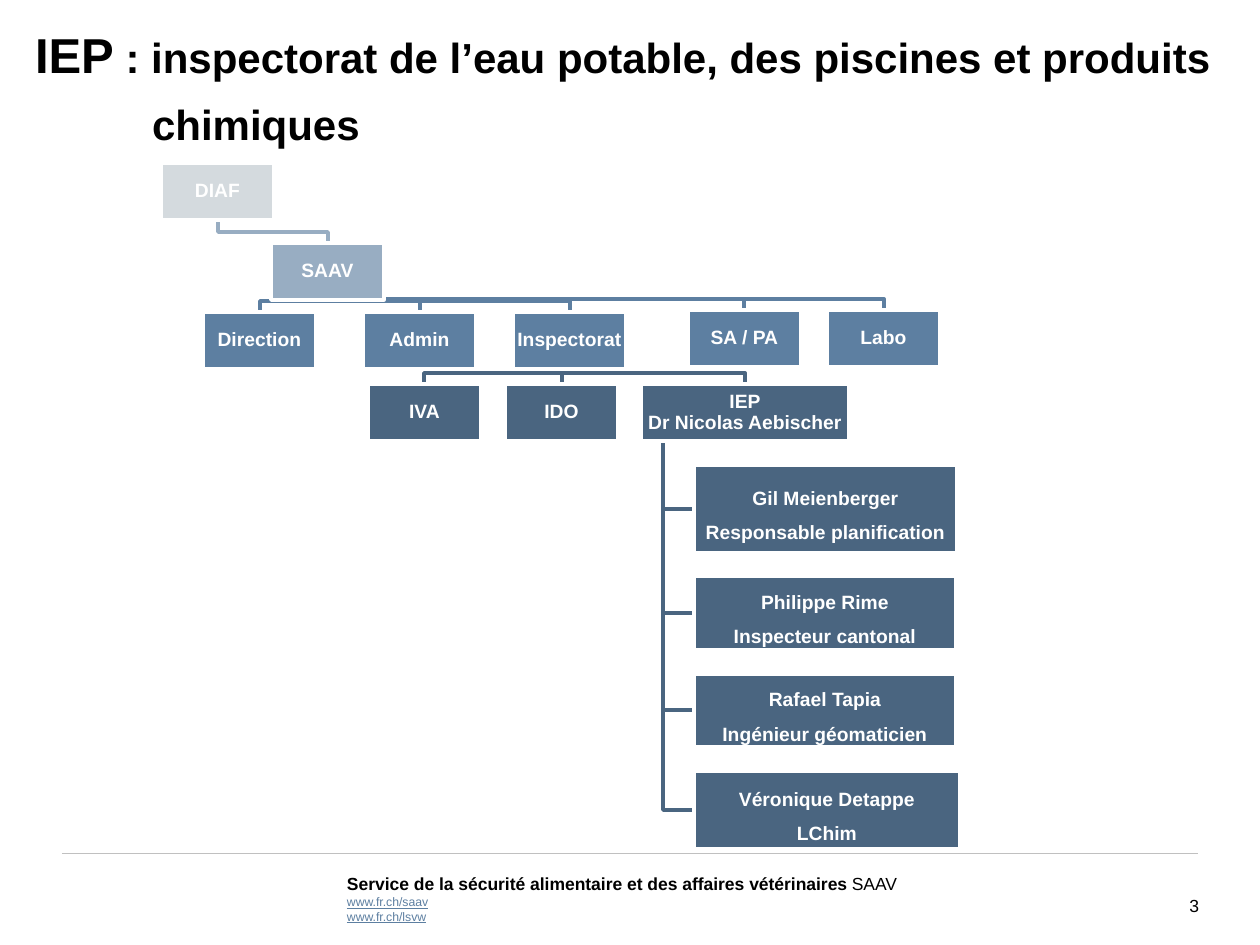
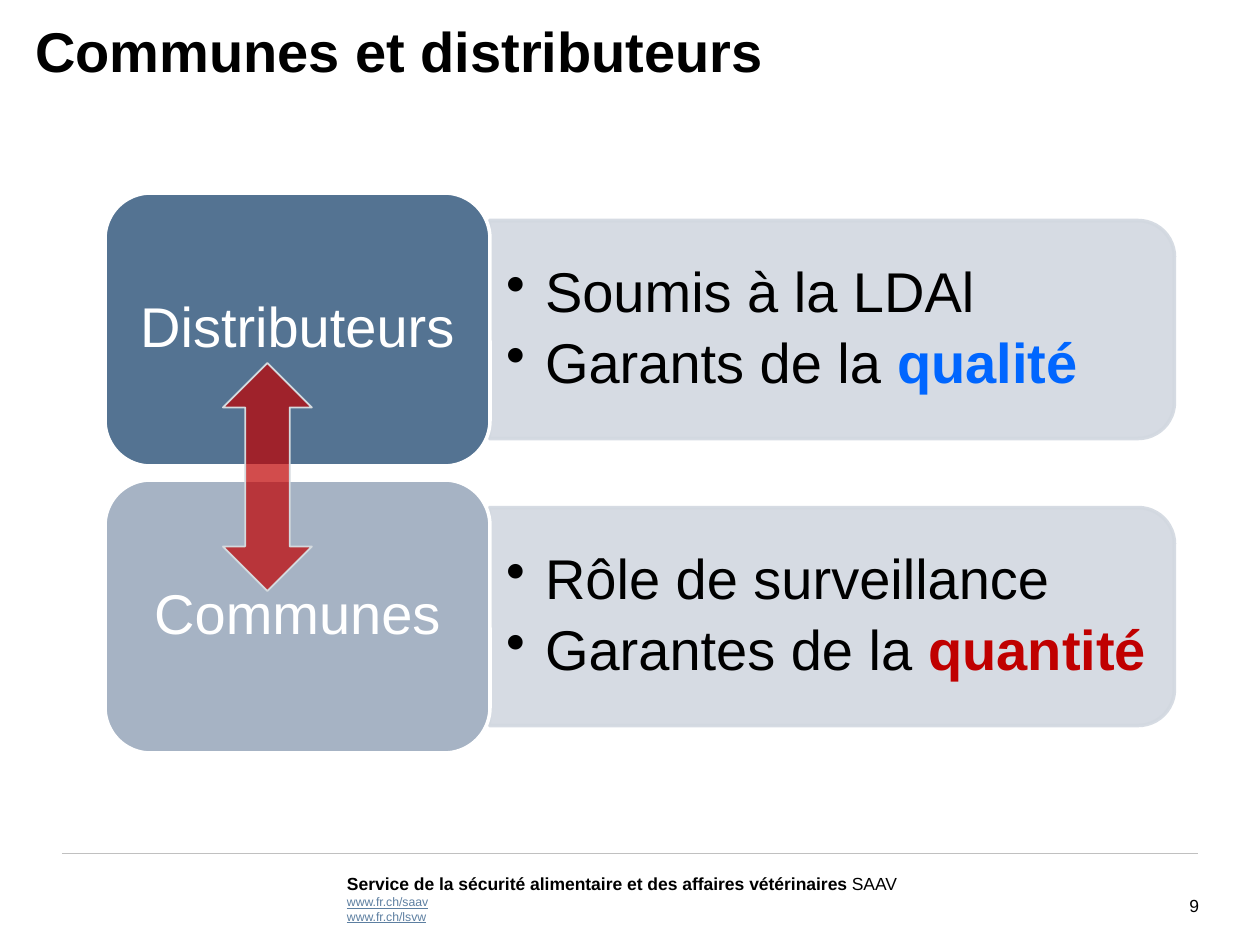
from dataclasses import dataclass

from lxml import etree
from pptx import Presentation
from pptx.dml.color import RGBColor
from pptx.enum.shapes import MSO_CONNECTOR, MSO_SHAPE
from pptx.enum.text import MSO_ANCHOR, PP_ALIGN
from pptx.oxml.ns import qn
from pptx.util import Pt

PX = 914400 / 126  # EMU per px

RECTANGLE = MSO_SHAPE.RECTANGLE
ROUNDED = MSO_SHAPE.ROUNDED_RECTANGLE
ROUNDED_TOP = MSO_SHAPE.ROUND_2_SAME_RECTANGLE
UP_DOWN_ARROW = MSO_SHAPE.UP_DOWN_ARROW
STRAIGHT = MSO_CONNECTOR.STRAIGHT
TOP, MIDDLE = MSO_ANCHOR.TOP, MSO_ANCHOR.MIDDLE
LEFT, CENTER, RIGHT = PP_ALIGN.LEFT, PP_ALIGN.CENTER, PP_ALIGN.RIGHT


@dataclass(frozen=True)
class Theme:
    font: str = "Arial"
    black: str = "000000"
    white: str = "FFFFFF"
    rule: str = "C0C0C0"
    pale: str = "D4DADE"
    light: str = "98ADC2"
    medium: str = "5D7FA1"
    dark: str = "4A6580"
    distributors: str = "547392"
    communes: str = "A6B3C4"
    panel: str = "D2D8E0"
    red: str = "C00000"
    blue: str = "0066FF"
    large: int = 32
    title_lead: int = 28
    title_long: int = 24
    node: int = 11
    footer: int = 10
    link: int = 7
    title_leading: int = 37


THEME = Theme()


@dataclass(frozen=True)
class Node:
    """One box of the organisation chart, measured in px."""
    text: str
    left: int
    top: int
    color: str
    parent: str = ""
    width: int = 113
    height: int = 57
    spacing: float = 0.9

    @property
    def center(self):
        return self.left + self.width / 2

    @property
    def middle(self):
        return self.top + self.height / 2

    @property
    def bottom(self):
        return self.top + self.height


BUS_GAP = 11      # from the horizontal line down to the boxes below it
STAFF_INDENT = 22  # from the left of the parent box to the staff line
STAFF_LEFT = 694
STAFF = [
    ("Gil Meienberger\nResponsable planification", 465, 263, 88),
    ("Philippe Rime\nInspecteur cantonal", 576, 262, 74),
    ("Rafael Tapia\nIngénieur géomaticien", 674, 262, 73),
    ("Véronique Detappe\nLChim", 771, 266, 78),
]
UNITS = {
    "diaf": Node("DIAF", 161, 163, THEME.pale),
    "saav": Node("SAAV", 271, 243, THEME.light, "diaf"),
    "direction": Node("Direction", 203, 312, THEME.medium, "saav"),
    "admin": Node("Admin", 363, 312, THEME.medium, "saav"),
    "inspectorat": Node("Inspectorat", 513, 312, THEME.medium, "saav"),
    "sa_pa": Node("SA / PA", 688, 310, THEME.medium, "saav"),
    "labo": Node("Labo", 827, 310, THEME.medium, "saav"),
    "iva": Node("IVA", 368, 384, THEME.dark, "inspectorat"),
    "ido": Node("IDO", 505, 384, THEME.dark, "inspectorat"),
    "iep": Node("IEP\nDr Nicolas Aebischer", 641, 384, THEME.dark,
                "inspectorat", width=208),
}


def px(*values):
    lengths = [round(value * PX) for value in values]
    return lengths if len(lengths) > 1 else lengths[0]


def rgb(color):
    return RGBColor.from_string(color)


def add_span(para, text, size, color, bold=False, underline=False):
    for index, line in enumerate(text.split("\n")):
        if index:
            para.add_line_break()
        span = para.add_run()
        span.text = line
        span.font.name = THEME.font
        span.font.size = Pt(size)
        span.font.bold = bold
        span.font.underline = underline
        span.font.color.rgb = rgb(color)


def write_text(shape, paragraphs, size, color=THEME.black, bold=False,
               align=LEFT, anchor=TOP, insets=(0, 0), spacing=None,
               after=0, hang=0, bullet=None):
    """Each paragraph is a list of (text, format changes) spans."""
    frame = shape.text_frame
    frame.word_wrap = True
    frame.vertical_anchor = anchor
    frame.margin_left = frame.margin_right = px(insets[0])
    frame.margin_top = frame.margin_bottom = px(insets[1])
    for index, spans in enumerate(paragraphs):
        para = frame.add_paragraph() if index else frame.paragraphs[0]
        para.alignment = align
        if spacing:
            para.line_spacing = spacing
        para.space_after = Pt(after)
        properties = para._p.get_or_add_pPr()
        if hang:
            properties.set("marL", str(px(hang)))
            properties.set("indent", str(-px(hang)))
        if bullet:
            etree.SubElement(properties, qn("a:buChar")).set("char", bullet)
        for text, changes in spans:
            add_span(para, text, **{"size": size, "color": color,
                                    "bold": bold, **changes})
    return frame


def add_text(page, area, paragraphs, **text_format):
    box = page.shapes.add_textbox(*px(*area))
    return write_text(box, paragraphs, **text_format)


def add_block(page, kind, area, fill, line, line_width=2, opacity=100):
    block = page.shapes.add_shape(kind, *px(*area))
    block.shadow.inherit = False
    block.fill.solid()
    block.fill.fore_color.rgb = rgb(fill)
    block.line.color.rgb = rgb(line)
    block.line.width = Pt(line_width)
    if opacity < 100:
        for color in block._element.spPr.iter(qn("a:srgbClr")):
            if color.get("val") == fill:
                alpha = etree.SubElement(color, qn("a:alpha"))
                alpha.set("val", str(opacity * 1000))
    return block


def add_branch(page, points, color):
    builder = page.shapes.build_freeform(*points[0], scale=PX)
    builder.add_line_segments(points[1:], close=False)
    branch = builder.convert_to_shape()
    branch.shadow.inherit = False
    branch.fill.background()
    branch.line.color.rgb = rgb(color)
    branch.line.width = Pt(2)


def add_rule(page, left, right, y):
    rule = page.shapes.add_connector(STRAIGHT, *px(left, y, right, y))
    rule.line.color.rgb = rgb(THEME.rule)
    rule.line.width = Pt(0.25)
    etree.SubElement(rule._element.spPr, qn("a:effectLst"))


def add_page(deck, number, title, title_size, hang=0):
    """Blank page with the shared title style and footer."""
    page = deck.slides.add_slide(deck.slide_layouts[6])
    add_text(page, (1144, 895, 55, 21), [[(str(number), {})]],
             size=THEME.footer, align=RIGHT)
    link = {"size": THEME.link, "color": THEME.medium, "underline": True}
    service = "Service de la sécurité alimentaire et des affaires vétérinaires "
    footer = add_text(page, (347, 871, 661, 98), [
        [(service, {"bold": True}), ("SAAV", {})],
        [("www.fr.ch/saav", link)],
        [("www.fr.ch/lsvw", link)],
    ], size=THEME.footer)
    footer.paragraphs[0].line_spacing = Pt(13.4)
    add_rule(page, 62, 1198, 853)
    add_text(page, (35, 19, 1201, 123), [title], size=title_size, bold=True,
             spacing=Pt(THEME.title_leading), hang=hang)
    return page


def add_node(page, node):
    block = add_block(page, RECTANGLE,
                      (node.left, node.top, node.width, node.height),
                      node.color, THEME.white)
    write_text(block, [[(node.text, {})]], size=THEME.node, color=THEME.white,
               bold=True, align=CENTER, anchor=MIDDLE, insets=(1, 1),
               spacing=node.spacing)


def build_organisation(deck):
    title = [("IEP", {"size": THEME.title_lead}),
             (" : inspectorat de l’eau potable, des piscines et produits "
              "chimiques", {})]
    page = add_page(deck, 3, title, THEME.title_long, hang=117)
    staff = [Node(text, STAFF_LEFT, top, THEME.dark, "iep", width, height, 1.5)
             for text, top, width, height in STAFF]

    # Branches lie under the boxes
    for node in UNITS.values():
        if node.parent:
            parent = UNITS[node.parent]
            bus = node.top - BUS_GAP
            add_branch(page, [(parent.center, parent.bottom),
                              (parent.center, bus), (node.center, bus),
                              (node.center, node.top)], node.color)
    for node in staff:
        parent = UNITS[node.parent]
        trunk = parent.left + STAFF_INDENT
        add_branch(page, [(trunk, parent.bottom), (trunk, node.middle),
                          (node.left, node.middle)], node.color)

    for node in [*UNITS.values(), *staff]:
        add_node(page, node)


def add_role(page, top, name, color, duties):
    """Rounded name box with its panel of duties on the right."""
    height, panel_length, panel_height = 273, 685, 218
    middle = top + height / 2
    panel = add_block(page, ROUNDED_TOP,
                      (832 - panel_height / 2, middle - panel_length / 2,
                       panel_height, panel_length),
                      THEME.panel, THEME.panel, opacity=90)
    panel.rotation = 90
    add_text(page, (490, middle - 99, 675, 198), duties, size=THEME.large,
             anchor=MIDDLE, insets=(16, 9), spacing=0.9, after=6, hang=39,
             bullet="•")
    block = add_block(page, ROUNDED, (105, top, 385, height), color,
                      THEME.white)
    write_text(block, [[(name, {})]], size=THEME.large, color=THEME.white,
               align=CENTER, anchor=MIDDLE, insets=(16, 9), spacing=0.9)


def build_roles(deck):
    page = add_page(deck, 9, [("Communes et distributeurs", {})], THEME.large)
    add_role(page, 193, "Distributeurs", THEME.distributors, [
        [("Soumis à la LDAl", {})],
        [("Garants de la ", {}),
         ("qualité", {"color": THEME.blue, "bold": True})],
    ])
    add_role(page, 480, "Communes", THEME.communes, [
        [("Rôle de surveillance", {})],
        [("Garantes de la ", {}),
         ("quantité", {"color": THEME.red, "bold": True})],
    ])
    add_block(page, UP_DOWN_ARROW, (223, 363, 89, 228), THEME.red, THEME.pale,
              line_width=1, opacity=70)


def main():
    deck = Presentation()
    deck.slide_width, deck.slide_height = px(1260, 945)
    build_organisation(deck)
    build_roles(deck)
    deck.save("out.pptx")


if __name__ == "__main__":
    main()
